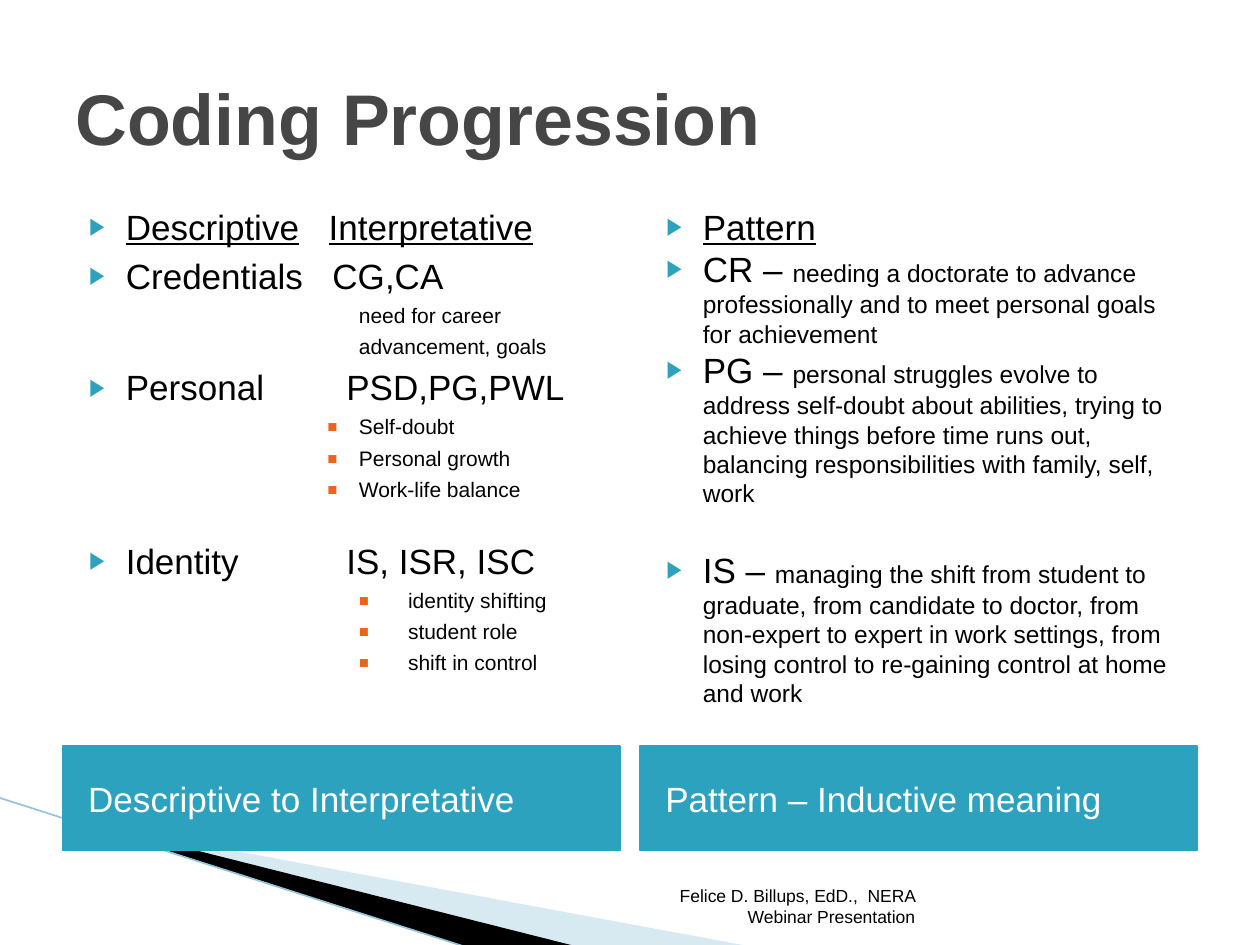
import pptx
import pptx.util
import pptx.dml.color
import pptx.enum.shapes
import pptx.enum.text
import pptx.oxml.ns
from lxml import etree

Inches, Pt = pptx.util.Inches, pptx.util.Pt
RGB = pptx.dml.color.RGBColor
ANCHOR, ALIGN = pptx.enum.text.MSO_ANCHOR, pptx.enum.text.PP_ALIGN
qn = pptx.oxml.ns.qn

BLACK, WHITE, GREY = RGB(0, 0, 0), RGB(255, 255, 255), RGB(0x46, 0x46, 0x46)
TEAL, ORANGE = RGB(0x2D, 0xA2, 0xBF), RGB(0xEB, 0x64, 0x1B)
PALE, LINE_BLUE = RGB(0x9C, 0xCA, 0xDC), RGB(0x93, 0xC5, 0xD8)

# Content: (runs, format) per paragraph; a run is (text, size)
MAIN = dict(left=0.4, hang=0.29, bullet=("▶", TEAL, 68))
SQUARE = ("◾", ORANGE, 100)
NOTE = dict(left=2.25, before=3.5)
GROWTH = dict(left=2.25, hang=0.25, before=3.5, bullet=SQUARE)
SHIFT = dict(left=2.64, hang=0.39, before=3.5, bullet=SQUARE)

DESCRIPTIVE = [
    ([("Descriptive\tInterpretative", 20)], dict(MAIN, tab=2.01, underline=True)),
    ([("Credentials\tCG,CA", 20)], dict(MAIN, tab=2.04, before=4)),
    ([("need for career", 12)], NOTE),
    ([("advancement, goals", 12)], NOTE),
    ([("Personal\tPSD,PG,PWL", 20)], dict(MAIN, tab=2.15, before=4)),
    ([("Self-doubt", 12)], GROWTH),
    ([("Personal growth", 12)], GROWTH),
    ([("Work-life balance", 12)], GROWTH),
    ([("Identity\tIS, ISR, ISC", 20)], dict(MAIN, tab=2.15, before=21.3)),
    ([("identity shifting", 12)], SHIFT),
    ([("student role", 12)], SHIFT),
    ([("shift in control", 12)], SHIFT),
]
PATTERN = [
    ([("Pattern", 20)], dict(MAIN, underline=True)),
    ([("CR – ", 20), ("needing a doctorate to advance professionally and to meet "
                      "personal goals for achievement", 14)], MAIN),
    ([("PG – ", 20), ("personal struggles evolve to address self-doubt about abilities, "
                      "trying to achieve things before time runs out, balancing "
                      "responsibilities with family, self, work", 14)], MAIN),
    ([("IS – ", 20), ("managing the shift from student to graduate, from candidate to "
                      "doctor, from non-expert to expert in work settings, from losing "
                      "control to re-gaining control at home and work", 14)],
     dict(MAIN, before=23)),
]
COLUMNS = [("Descriptive to Interpretative", DESCRIPTIVE),
           ("Pattern – Inductive meaning", PATTERN)]
SWOOSHES = [
    ([(0.55, 6.51), (5.95, 7.51), (4.56, 7.51), (0.55, 6.5)], PALE, 40),
    ([(0.53, 6.49), (4.57, 7.51), (3.72, 7.52), (0.54, 6.5)], BLACK, 100),
]


def add_text(p, runs, color=BLACK, bold=False, underline=False, align=None,
             left=0, hang=0, before=0, bullet=None, tab=None):
    """Fill one paragraph with (text, size) runs and its format."""
    pPr = p._p.get_or_add_pPr()
    pPr.set("marL", str(Inches(left)))
    pPr.set("indent", str(-Inches(hang)))
    if bullet:
        char, bullet_color, percent = bullet
        clr = etree.SubElement(pPr, qn("a:buClr"))
        etree.SubElement(clr, qn("a:srgbClr"), val=str(bullet_color))
        etree.SubElement(pPr, qn("a:buSzPct"), val=str(percent * 1000))
        etree.SubElement(pPr, qn("a:buFont"), typeface="Arial")
        etree.SubElement(pPr, qn("a:buChar"), char=char)
    if tab:
        tabs = etree.SubElement(pPr, qn("a:tabLst"))
        etree.SubElement(tabs, qn("a:tab"), pos=str(Inches(tab)), algn="l")
    if before:
        p.space_before = Pt(before)
    p.alignment = align
    for text, size in runs:
        r = p.add_run()
        r.text = text
        r.font.name, r.font.size = "Arial", Pt(size)
        r.font.bold, r.font.underline = bold, underline
        r.font.color.rgb = color


def set_frame(sp, anchor, margin_left=0.1):
    tf = sp.text_frame
    tf.word_wrap = True
    tf.vertical_anchor = anchor
    tf.margin_left, tf.margin_right = Inches(margin_left), Inches(0.1)
    tf.margin_top = tf.margin_bottom = Inches(0.05)
    return tf


def add_box(s, x, y, w, h, anchor):
    sp = s.shapes.add_textbox(Inches(x), Inches(y), Inches(w), Inches(h))
    return set_frame(sp, anchor)


prs = pptx.Presentation()
prs.slide_width, prs.slide_height = Inches(10), Inches(7.5)
s = prs.slides.add_slide(prs.slide_layouts[6])

# Corner swooshes
for points, color, alpha in SWOOSHES:
    corners = [(Inches(x), Inches(y)) for x, y in points]
    fb = s.shapes.build_freeform(*corners[0])
    fb.add_line_segments(corners[1:], close=True)
    sp = fb.convert_to_shape()
    sp.shadow.inherit = False
    sp.fill.solid()
    sp.fill.fore_color.rgb = color
    sp.line.fill.background()
    if alpha < 100:
        clr = sp._element.spPr.find(qn("a:solidFill")).find(qn("a:srgbClr"))
        etree.SubElement(clr, qn("a:alpha"), val=str(alpha * 1000))

edge = s.shapes.add_connector(pptx.enum.shapes.MSO_CONNECTOR.STRAIGHT,
                              Inches(-0.01), Inches(6.33), Inches(3.71), Inches(7.52))
edge.line.color.rgb, edge.line.width = LINE_BLUE, Pt(0.95)
etree.SubElement(edge._element.spPr, qn("a:effectLst"))

# Title
tf = add_box(s, 0.5, 0.3, 9, 1.25, ANCHOR.MIDDLE)
add_text(tf.paragraphs[0], [("Coding Progression", 41)], color=GREY, bold=True)

# Two columns, each with a caption bar below
COL_W, COL_STEP = 4.42, 4.58
for i, (caption, items) in enumerate(COLUMNS):
    x = 0.5 + i * COL_STEP
    bar = s.shapes.add_shape(pptx.enum.shapes.MSO_SHAPE.RECTANGLE,
                             Inches(x), Inches(5.92), Inches(COL_W), Inches(0.83))
    bar.shadow.inherit = False
    bar.fill.solid()
    bar.fill.fore_color.rgb = bar.line.color.rgb = TEAL
    bar.line.width = Pt(0.75)
    tf = set_frame(bar, ANCHOR.MIDDLE, margin_left=0.2)
    add_text(tf.paragraphs[0], [(caption, 20)], color=WHITE, align=ALIGN.LEFT)

    tf = add_box(s, x, 1.58, COL_W, 4.31, ANCHOR.TOP)
    for n, (runs, fmt) in enumerate(items):
        add_text(tf.add_paragraph() if n else tf.paragraphs[0], runs, **fmt)

# Footer
tf = add_box(s, 4.79, 7.01, 2.57, 0.4, ANCHOR.BOTTOM)
add_text(tf.paragraphs[0], [("Felice D. Billups, EdD.,  NERA Webinar Presentation", 10)],
         align=ALIGN.RIGHT)

prs.save("out.pptx")
